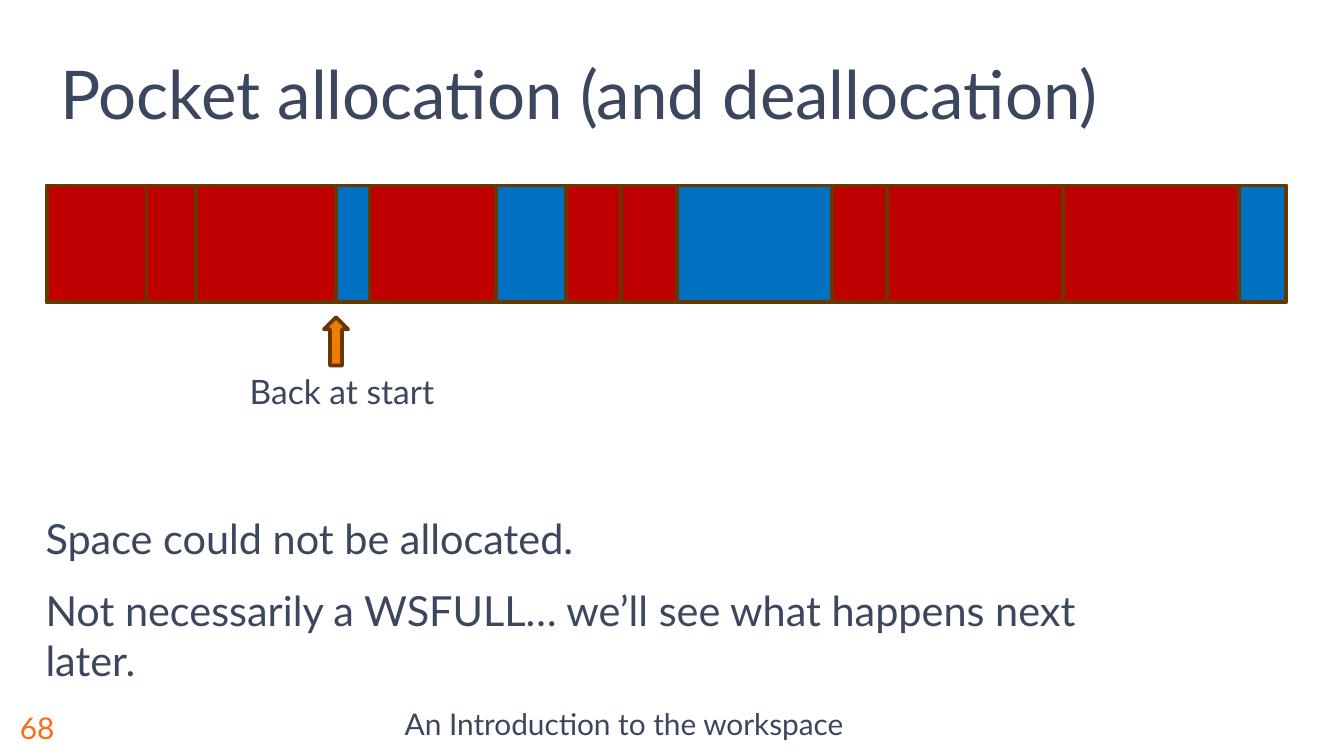
from pptx import Presentation
from pptx import util as u
from pptx.dml import color
from pptx.enum import shapes, text

HUES = {"ink": "3B475E", "page": "FF6A13", "free": "0070C0",
        "used": "C00000", "edge": "683800", "arrow": "ED7F00"}

# Widescreen 16:9 slide
deck = Presentation()
deck.slide_width, deck.slide_height = u.Inches(10), u.Inches(10 * 9 / 16)
slide = deck.slides.add_slide(deck.slide_layouts[6])


def add_text(box, lines, size, hue="ink", anchor="TOP", align="LEFT", after=0, space=1.0):
    frame = slide.shapes.add_textbox(*[u.Inches(v) for v in box]).text_frame
    frame.word_wrap = True
    frame.vertical_anchor = text.MSO_ANCHOR[anchor]
    for i, line in enumerate(lines):
        para = frame.paragraphs[0] if i == 0 else frame.add_paragraph()
        para.alignment = text.PP_ALIGN[align]
        para.space_after = u.Pt(after)
        para.line_spacing = space
        run = para.add_run()
        run.text = line
        run.font.name = "Lato"
        run.font.size = u.Pt(size)
        run.font.color.rgb = color.RGBColor.from_string(HUES[hue])


def add_block(kind, box, hue):
    block = slide.shapes.add_shape(kind, *[u.Inches(v) for v in box])
    block.shadow.inherit = False
    block.fill.solid()
    block.fill.fore_color.rgb = color.RGBColor.from_string(HUES[hue])
    block.line.color.rgb = color.RGBColor.from_string(HUES["edge"])
    block.line.width = u.Pt(2)
    return block


# Footer and page number
add_text((0.78, 5.19, 7.73, 0.44), ["An Introduction to the workspace"], 16,
         anchor="MIDDLE", align="CENTER", space=0.8)
add_text((0.05, 5.19, 0.73, 0.44), ["68"], 16, hue="page", anchor="MIDDLE")

# Pointer label
add_text((1.76, 2.71, 1.63, 0.4), ["Back at start"], 18)

# Title
add_text((0.35, 0.29, 8.2, 0.75), ["Pocket allocation (and deallocation)"], 36,
         anchor="BOTTOM")

# Workspace: free bar with used pockets (left, width) on top
top, high = 1.38, 0.87
rect = shapes.MSO_SHAPE.RECTANGLE
add_block(rect, (0.35, top, 9.22, high), "free")
pockets = [(0.35, 0.74), (1.09, 0.38), (2.75, 0.94), (4.21, 0.42), (4.62, 0.42),
           (6.19, 0.42), (6.6, 1.31), (7.91, 1.31), (1.46, 1.04)]
for left, wide in pockets:
    add_block(rect, (left, top, wide, high), "used")

# Pointer
arrow = add_block(shapes.MSO_SHAPE.DOWN_ARROW, (2.41, 2.36, 0.18, 0.36), "arrow")
arrow.rotation = 180

# Body
add_text((0.24, 3.77, 8.45, 1.15),
         ["Space could not be allocated.",
          "Not necessarily a WSFULL… we’ll see what happens next later."],
         22.2, after=12)

deck.save("out.pptx")
